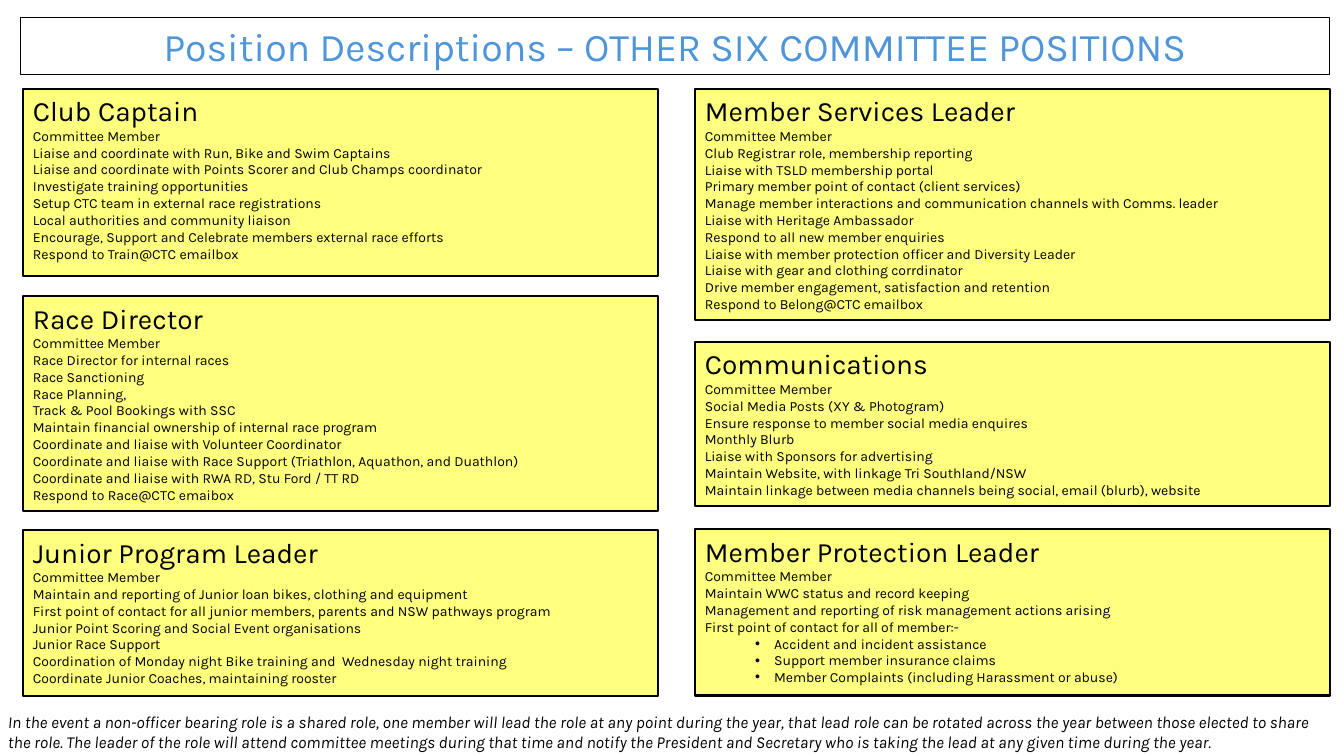
"""Build the slide describing the other six committee positions."""
from lxml import etree
from pptx import Presentation
from pptx.dml.color import RGBColor
from pptx.enum.shapes import MSO_SHAPE
from pptx.enum.text import MSO_ANCHOR, PP_ALIGN
from pptx.oxml.ns import qn
from pptx.util import Pt

RECTANGLE = MSO_SHAPE.RECTANGLE
TOP, MIDDLE = MSO_ANCHOR.TOP, MSO_ANCHOR.MIDDLE
LEFT, CENTER = PP_ALIGN.LEFT, PP_ALIGN.CENTER
LEFT_COLUMN, RIGHT_COLUMN = 16.4, 496.4
COLUMN_WIDTH = 453.6
BULLET = "•"


def color(hex_string):
    return RGBColor.from_string(hex_string)


def write(paragraph, text, size, hex_string="000000", alignment=LEFT):
    paragraph.text = text
    paragraph.alignment = alignment
    paragraph.font.name = "Karla"
    paragraph.font.size = Pt(size)
    paragraph.font.color.rgb = color(hex_string)


positions = [
    (LEFT_COLUMN, 63.4, 133.9, "Club Captain", [
        "Liaise and coordinate with Run, Bike and Swim Captains",
        "Liaise and coordinate with Points Scorer and Club Champs coordinator",
        "Investigate training opportunities",
        "Setup CTC team in external race registrations",
        "Local authorities and community liaison",
        "Encourage, Support and Celebrate members external race efforts",
        "Respond to Train@CTC emailbox",
    ]),
    (LEFT_COLUMN, 211.5, 153.4, "Race Director", [
        "Race Director for internal races",
        "Race Sanctioning",
        "Race Planning,",
        "Track & Pool Bookings with SSC",
        "Maintain financial ownership of internal race program",
        "Coordinate and liaise with Volunteer Coordinator",
        "Coordinate and liaise with Race Support (Triathlon, Aquathon, and Duathlon)",
        "Coordinate and liaise with RWA RD, Stu Ford / TT RD",
        "Respond to Race@CTC emaibox",
    ]),
    (LEFT_COLUMN, 378.6, 118.8, "Junior Program Leader", [
        "Maintain and reporting of Junior loan bikes, clothing and equipment",
        "First point of contact for all junior members, parents and NSW pathways program",
        "Junior Point Scoring and Social Event organisations",
        "Junior Race Support",
        "Coordination of Monday night Bike training and  Wednesday night training",
        "Coordinate Junior Coaches, maintaining rooster",
    ]),
    (RIGHT_COLUMN, 63.4, 164.9, "Member Services Leader", [
        "Club Registrar role, membership reporting",
        "Liaise with TSLD membership portal",
        "Primary member point of contact (client services)",
        "Manage member interactions and communication channels with Comms. leader",
        "Liaise with Heritage Ambassador",
        "Respond to all new member enquiries",
        "Liaise with member protection officer and Diversity Leader",
        "Liaise with gear and clothing corrdinator",
        "Drive member engagement, satisfaction and retention",
        "Respond to Belong@CTC emailbox",
    ]),
    (RIGHT_COLUMN, 244.2, 117.4, "Communications", [
        "Social Media Posts (XY & Photogram)",
        "Ensure response to member social media enquires",
        "Monthly Blurb",
        "Liaise with Sponsors for advertising",
        "Maintain Website, with linkage Tri Southland/NSW",
        "Maintain linkage between media channels being social, email (blurb), website",
    ]),
    (RIGHT_COLUMN, 378, 118.8, "Member Protection Leader", [
        "Maintain WWC status and record keeping",
        "Management and reporting of risk management actions arising",
        "First point of contact for all of member:-",
        BULLET + "Accident and incident assistance",
        BULLET + "Support member insurance claims",
        BULLET + "Member Complaints (including Harassment or abuse)",
    ]),
]

presentation = Presentation()
presentation.slide_width, presentation.slide_height = Pt(960), Pt(540)
slide = presentation.slides.add_slide(presentation.slide_layouts[6])

title = slide.shapes.add_shape(RECTANGLE, Pt(14.4), Pt(12.4), Pt(935.3), Pt(41.2))
title.shadow.inherit = False
title.fill.background()
title.line.color.rgb = color("000000")
title.line.width = Pt(0.75)
title.text_frame.word_wrap = True
title.text_frame.vertical_anchor = MIDDLE
write(title.text_frame.paragraphs[0],
      "Position Descriptions – OTHER SIX COMMITTEE POSITIONS", 28, "4E95D9", CENTER)

for left, top, height, role, duties in positions:
    box = slide.shapes.add_shape(RECTANGLE, Pt(left), Pt(top), Pt(COLUMN_WIDTH), Pt(height))
    box.shadow.inherit = False
    box.fill.solid()
    box.fill.fore_color.rgb = color("FFFF00")
    fill_color = box.fill._xPr.find(qn("a:solidFill"))[0]
    etree.SubElement(fill_color, qn("a:alpha"), val="50000")
    box.line.color.rgb = color("000000")
    box.line.width = Pt(1.5)
    frame = box.text_frame
    frame.word_wrap = True
    frame.vertical_anchor = TOP
    write(frame.paragraphs[0], role, 20)
    for duty in ["Committee Member"] + duties:
        paragraph = frame.add_paragraph()
        write(paragraph, duty.removeprefix(BULLET), 10)
        if duty.startswith(BULLET):
            paragraph.level = 1
            properties = paragraph._p.get_or_add_pPr()
            properties.set("marL", str(Pt(49.5)))
            properties.set("indent", str(Pt(-13.5)))
            bullet_font = etree.Element(qn("a:buFont"), typeface="Arial")
            bullet_character = etree.Element(qn("a:buChar"), char=BULLET)
            properties.insert(0, bullet_font)
            properties.insert(1, bullet_character)

footnote = slide.shapes.add_textbox(Pt(-1.4), Pt(504.7), Pt(960), Pt(36))
footnote.text_frame.word_wrap = True
note = footnote.text_frame.paragraphs[0]
write(note, "In the event a non-officer bearing role is a shared role, one member will lead "
      "the role at any point during the year, that lead role can be rotated across the year "
      "between those elected to share the role. The leader of the role will attend committee "
      "meetings during that time and notify the President and Secretary who is taking the lead "
      "at any given time during the year.", 12)
note.font.italic = True

presentation.save("out.pptx")
